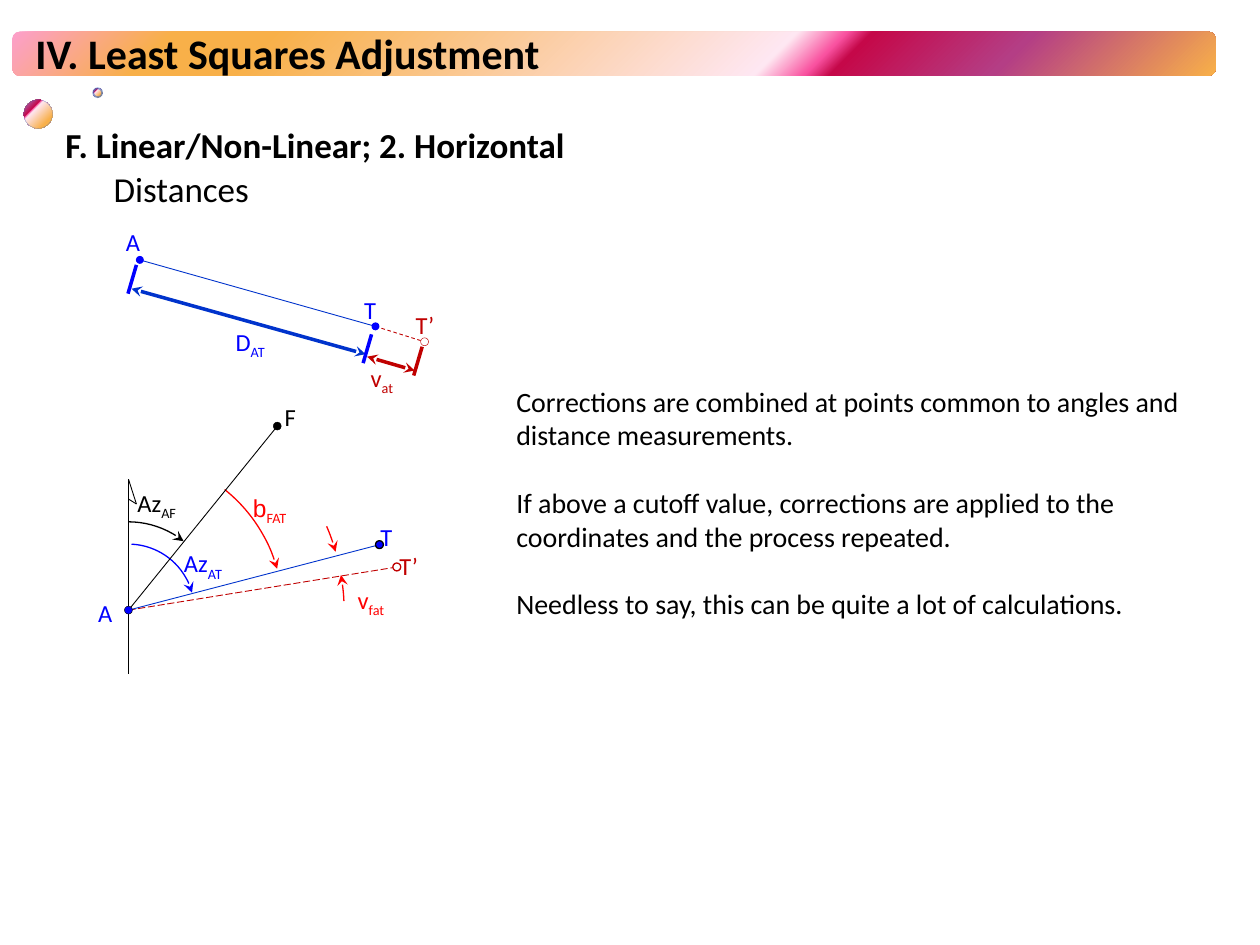
from lxml.etree import SubElement as Sub
from pptx import Presentation
from pptx.dml.color import RGBColor as RGB
from pptx.enum.dml import MSO_LINE as Dash
from pptx.enum.shapes import MSO_CONNECTOR as Conn, MSO_SHAPE as Form
from pptx.enum.text import MSO_ANCHOR as Anchor, MSO_AUTO_SIZE as Fit, PP_ALIGN as Align
from pptx.oxml.ns import qn
from pptx.util import Cm, Pt

HUES = {"black": "000000", "white": "FFFFFF", "blue": "0000FF", "navy": "0033CC",
        "red": "FF0000", "wine": "C00000", "rim": "3B6BC1"}
BLEND = [(0, "FC9FCB"), (13, "F8B049"), (21, "F8B049"), (63, "FEE7F2"),
         (67, "F952A0"), (69, "C50849"), (82, "B43E85"), (100, "F8B049")]
DOT = 0.16


def hue(name):
    return RGB.from_string(HUES[name])


def put(obj, **form):
    for key, val in form.items():
        setattr(obj, key, val)


def stroke(item, color, width=0, dash=None, head=False, tail=False):
    line = item.line
    line.color.rgb = hue(color)
    line.width = Pt(width)
    if dash:
        line.dash_style = dash
    ln = item._element.spPr.find(qn("a:ln"))
    for tag, on in (("a:headEnd", head), ("a:tailEnd", tail)):
        if on:
            Sub(ln, qn(tag), type="stealth")


def shape(slide, form, x, y, w, h):
    item = slide.shapes.add_shape(form, Cm(x), Cm(y), Cm(w), Cm(h))
    item.shadow.inherit = False
    return item


def segment(slide, box, start, end, color, width=0, **ends):
    x, y = box
    line = slide.shapes.add_connector(Conn.STRAIGHT, Cm(x + start[0]), Cm(y + start[1]),
                                      Cm(x + end[0]), Cm(y + end[1]))
    stroke(line, color, width, **ends)
    Sub(line._element.spPr, qn("a:effectLst"))


def dot(slide, box, mid, fill, rim=None, width=0):
    item = shape(slide, Form.OVAL, box[0] + mid[0] - DOT / 2, box[1] + mid[1] - DOT / 2, DOT, DOT)
    item.fill.solid()
    item.fill.fore_color.rgb = hue(fill)
    if rim:
        stroke(item, rim, width)
    else:
        item.line.fill.background()


def arc(slide, box, mid, radius, start, end, color, **ends):
    """Draw an arc about mid; angles run clockwise in degrees from due right."""
    item = shape(slide, Form.ARC, box[0] + mid[0] - radius, box[1] + mid[1] - radius,
                 2 * radius, 2 * radius)
    item.adjustments[0], item.adjustments[1] = start * 0.6, end * 0.6
    item.fill.background()
    stroke(item, color, **ends)


def write(para, text, size, color="black", bold=False, face="Calibri"):
    run = para.add_run()
    run.text = text
    put(run.font, name=face, size=Pt(size), bold=bold)
    run.font.color.rgb = hue(color)
    return run


def frame(slide, x, y, w, h, **form):
    text = slide.shapes.add_textbox(Cm(x), Cm(y), Cm(w), Cm(h)).text_frame
    put(text, **form)
    return text


def label(slide, box, spot, width, color, text, sub="", face="Calibri"):
    body = frame(slide, box[0] + spot[0], box[1] + spot[1], width, 0.86,
                 word_wrap=False, auto_size=Fit.SHAPE_TO_FIT_TEXT)
    para = body.paragraphs[0]
    write(para, text, 14, color, face=face)
    if sub:
        run = write(para, sub, 14, color)
        run.font._element.set("baseline", "-25000")


def blend(item, radial=False):
    item.fill.gradient()
    grad = item._element.spPr.find(qn("a:gradFill"))
    for child in list(grad):
        grad.remove(child)
    stops = Sub(grad, qn("a:gsLst"))
    for pos, code in BLEND:
        Sub(Sub(stops, qn("a:gs"), pos=str(pos * 1000)), qn("a:srgbClr"), val=code)
    if radial:
        way = Sub(grad, qn("a:path"), path="circle")
        Sub(way, qn("a:fillToRect"), l="100000", t="100000")
    else:
        Sub(grad, qn("a:lin"), ang="2700000", scaled="1")


def header(slide, box):
    x, y = box
    bar = shape(slide, Form.ROUNDED_RECTANGLE, x, y, 24.26, 0.89)
    blend(bar)
    bar.line.fill.background()
    title = slide.shapes.title
    put(title, left=Cm(x + 0.21), top=Cm(y - 0.21), width=Cm(18.52), height=Cm(1.27))
    put(title.text_frame, vertical_anchor=Anchor.MIDDLE, auto_size=Fit.NONE, word_wrap=True)
    para = title.text_frame.paragraphs[0]
    para.alignment = Align.LEFT
    write(para, "IV. Least Squares Adjustment", 24, bold=True)
    slide.shapes._spTree.append(title._element)
    for dx, dy, size, width in ((0.23, 1.37, 0.58, 0.16), (1.63, 1.14, 0.18, 1)):
        ball = shape(slide, Form.OVAL, x + dx, y + dy, size, size)
        blend(ball, radial=True)
        stroke(ball, "rim", width)
        tint = ball._element.spPr.find(qn("a:ln")).find(".//" + qn("a:srgbClr"))
        Sub(tint, qn("a:alpha"), val="60000")


def outline(slide, box):
    body = frame(slide, *box, 21.89, 14.88, word_wrap=True)
    top, low = body.paragraphs[0], body.add_paragraph()
    put(top, line_spacing=0.9, space_before=Pt(7.5))
    put(low, line_spacing=0.9, space_before=Pt(3.8), level=1)
    low._p.get_or_add_pPr().set("marL", str(Cm(0.97)))
    write(top, "F. Linear/Non-Linear; 2. Horizontal", 20, bold=True)
    write(low, "Distances", 20)


def distance(slide, box):
    a, t, shift = (0.53, 0.79), (5.28, 2.13), (6.27, 2.44)
    segment(slide, box, a, t, "navy", 0.5)
    segment(slide, box, t, shift, "wine", 0.5, dash=Dash.DASH)
    segment(slide, box, (0.36, 1.37), (5.08, 2.69), "navy", head=True, tail=True)
    segment(slide, box, (5.11, 2.74), (6.07, 3.02), "wine", head=True, tail=True)
    for x, y, color in ((0.46, 0.89, "blue"), (5.2, 2.29, "blue"), (6.22, 2.54, "wine")):
        segment(slide, box, (x, y), (x - 0.17, y + 0.58), color)
    dot(slide, box, a, "blue")
    dot(slide, box, t, "blue")
    dot(slide, box, shift, "white", "wine", 0.25)
    for part in (((0, 0), 0.94, "blue", "A"), ((4.8, 1.37), 0.76, "blue", "T"),
                 ((5.84, 1.68), 0.89, "wine", "T’"), ((2.21, 2.01), 1.37, "blue", "D", "AT"),
                 ((4.93, 2.74), 0.99, "wine", "v", "at")):
        label(slide, box, *part)


def angle(slide, box):
    a, f, t, shift = (0.86, 4.32), (3.86, 0.61), (5.92, 3), (6.27, 3.45)
    hub = (0.76, 4.37)
    arc(slide, box, hub, 4.45, 337, 344, "red", tail=True)
    arc(slide, box, hub, 4.45, 350.2, 357, "red", head=True)
    for radius, start, end, color in ((3.11, 308.6, 344.5, "red"), (1.78, 270, 308.7, "black"),
                                      (1.33, 272.7, 344.7, "blue")):
        arc(slide, box, a, radius, start, end, color, tail=True)
    segment(slide, box, a, f, "black", 0.5)
    segment(slide, box, a, shift, "wine", 0.5, dash=Dash.LONG_DASH)
    segment(slide, box, a, t, "navy", 0.5)
    north, barb = (0.86, 1.68), (1.02, 2.18)
    for start, end in ((north, (0.86, 5.61)), (north, barb), (barb, (0.86, 2.08))):
        segment(slide, box, start, end, "black", 0.5)
    for part in (((0, 3.96), 0.94, "blue", "A"), ((3.76, 0), 0.74, "black", "F"),
                 ((5.69, 2.41), 0.76, "blue", "T"), ((6.07, 3), 0.89, "wine", "T’"),
                 ((0.79, 1.73), 1.32, "black", "Az", "AF"),
                 ((1.73, 2.95), 1.32, "blue", "Az", "AT"),
                 ((3.12, 1.83), 1.35, "red", "b", "FAT", "Arial"),
                 ((5.23, 3.68), 1.09, "red", "v", "fat")):
        label(slide, box, *part)
    dot(slide, box, a, "blue", "black", 0.25)
    dot(slide, box, f, "black", "black", 0.25)
    dot(slide, box, t, "blue", "black")
    dot(slide, box, shift, "white", "wine")


def notes(slide, box):
    body = frame(slide, *box, 14.1, 5.05, word_wrap=True)
    lines = ("Corrections are combined at points common to angles and distance measurements.",
             "If above a cutoff value, corrections are applied to the coordinates "
             "and the process repeated.",
             "Needless to say, this can be quite a lot of calculations.")
    for i, line in enumerate(lines):
        para = body.add_paragraph() if i else body.paragraphs[0]
        para.space_before = Pt(19.5 if i else 0)
        write(para, line, 16)


def main():
    deck = Presentation()
    put(deck, slide_width=Cm(25.4), slide_height=Cm(19.05))
    slide = deck.slides.add_slide(deck.slide_layouts[5])
    header(slide, (0.25, 0.64))
    outline(slide, (1.07, 2.46))
    distance(slide, (2.29, 4.45))
    notes(slide, (10.16, 7.62))
    angle(slide, (1.73, 7.98))
    deck.save("out.pptx")


if __name__ == "__main__":
    main()
